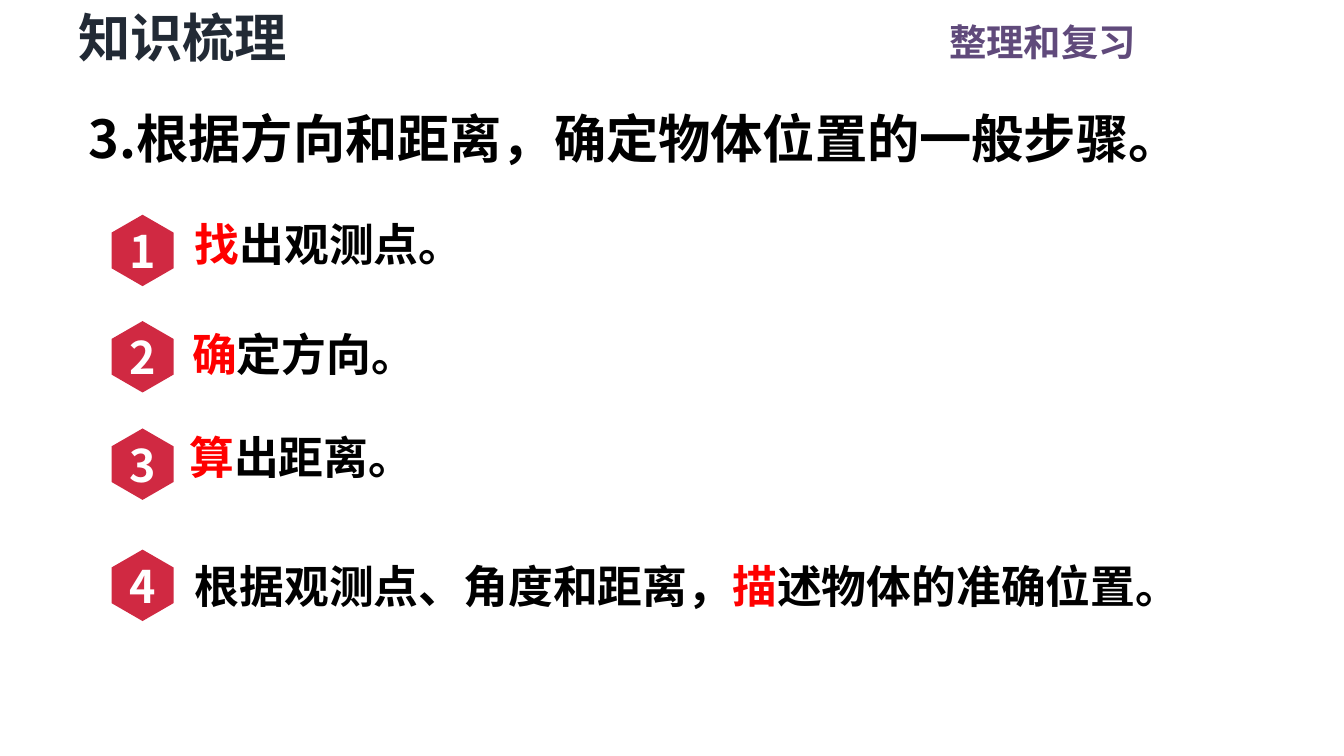
from lxml import etree
from pptx import Presentation
from pptx.dml.color import RGBColor
from pptx.enum.text import MSO_ANCHOR, PP_ALIGN
from pptx.oxml.ns import qn
from pptx.util import Cm, Pt

LEFT, RIGHT, MID = PP_ALIGN.LEFT, PP_ALIGN.RIGHT, PP_ALIGN.CENTER
CENTRE = MSO_ANCHOR.MIDDLE
FACE = "Noto Sans CJK SC"
BLACK, RED, WHITE = "000000", "FF0000", "FFFFFF"
BADGE, NAVY, PLUM = "D02942", "222A35", "604A7B"
WIDE, TIGHT = (0.25, 0.13), (0.18, 0.1)

# Text left, text top, text width, badge top, runs, line spacing in points
STEPS = [
    (3.43, 3.96, 10.29, 4.06, [("找", RED), ("出观测点。", BLACK)], None),
    (3.38, 6.05, 11.53, 6.07, [("确", RED), ("定方向。", BLACK)], None),
    (3.33, 8, 10.59, 8.1, [("算", RED), ("出距离。", BLACK)], None),
    (3.43, 10.44, 19.1, 10.39,
     [("根据观测点、角度和距离，", BLACK), ("描", RED),
      ("述物体的准确位置。", BLACK)], 28.8),
]


def tint(code):
    return RGBColor.from_string(code)


def write(frame, runs, size, align=LEFT, lead=None):
    para = frame.paragraphs[0]
    para.alignment = align
    if lead:
        para.line_spacing = Pt(lead)
    style = {"name": FACE, "size": Pt(size), "bold": True}
    for text, code in runs:
        run = para.add_run()
        run.text = text
        for key, value in style.items():
            setattr(run.font, key, value)
        run.font.color.rgb = tint(code)
        # East Asian glyphs take their own typeface
        etree.SubElement(run.font._element, qn("a:ea"), typeface=FACE)


def label(slide, box, runs, size, align=LEFT, pad=WIDE, lead=None):
    frame = slide.shapes.add_textbox(*map(Cm, box)).text_frame
    side, edge = map(Cm, pad)
    form = {"word_wrap": True, "margin_left": side, "margin_right": side,
            "margin_top": edge, "margin_bottom": edge}
    for key, value in form.items():
        setattr(frame, key, value)
    write(frame, runs, size, align, lead)


def badge(slide, box, text):
    x, y, w, h = box
    # Upright hexagon: points at top and bottom
    spots = [(0.5, 0), (1, 0.25), (1, 0.75), (0.5, 1), (0, 0.75), (0, 0.25)]
    points = [(Cm(x + w * u), Cm(y + h * v)) for u, v in spots]
    path = slide.shapes.build_freeform(*points[0])
    path.add_line_segments(points[1:], close=True)
    shape = path.convert_to_shape()
    shape.shadow.inherit = False
    shape.fill.solid()
    shape.fill.fore_color.rgb = tint(BADGE)
    shape.line.fill.background()
    shape.text_frame.vertical_anchor = CENTRE
    write(shape.text_frame, [(text, WHITE)], 24, MID)


def header(slide, box):
    x, y, w, h = box
    label(slide, (x, y, 5.13, h), [("知识梳理", NAVY)], 28, pad=TIGHT)
    label(slide, (x + w - 7.01, y + 0.23, 7.01, 1.12),
          [("整理和复习", PLUM)], 20, RIGHT)


def topic(slide, box):
    label(slide, box, [("3.根据方向和距离，确定物体位置的一般步骤。", BLACK)],
          28, pad=TIGHT)


def steps(slide, box):
    x, y, w, h = box
    for num, (left, top, width, mark, runs, lead) in enumerate(STEPS, 1):
        label(slide, (left, top, width, 1.27), runs, 24, lead=lead)
        badge(slide, (x, mark, w, h), str(num))


def main():
    deck = Presentation()
    deck.slide_width, deck.slide_height = Cm(25.4), Cm(14.29)
    slide = deck.slides.add_slide(deck.slide_layouts[6])
    header(slide, (1.3, 0, 20.42, 1.4))
    topic(slide, (1.5, 1.9, 22.2, 1.4))
    # Badge column: left, first top, badge width and height
    steps(slide, (2.11, 4.06, 1.17, 1.35))
    deck.save("out.pptx")


if __name__ == "__main__":
    main()
